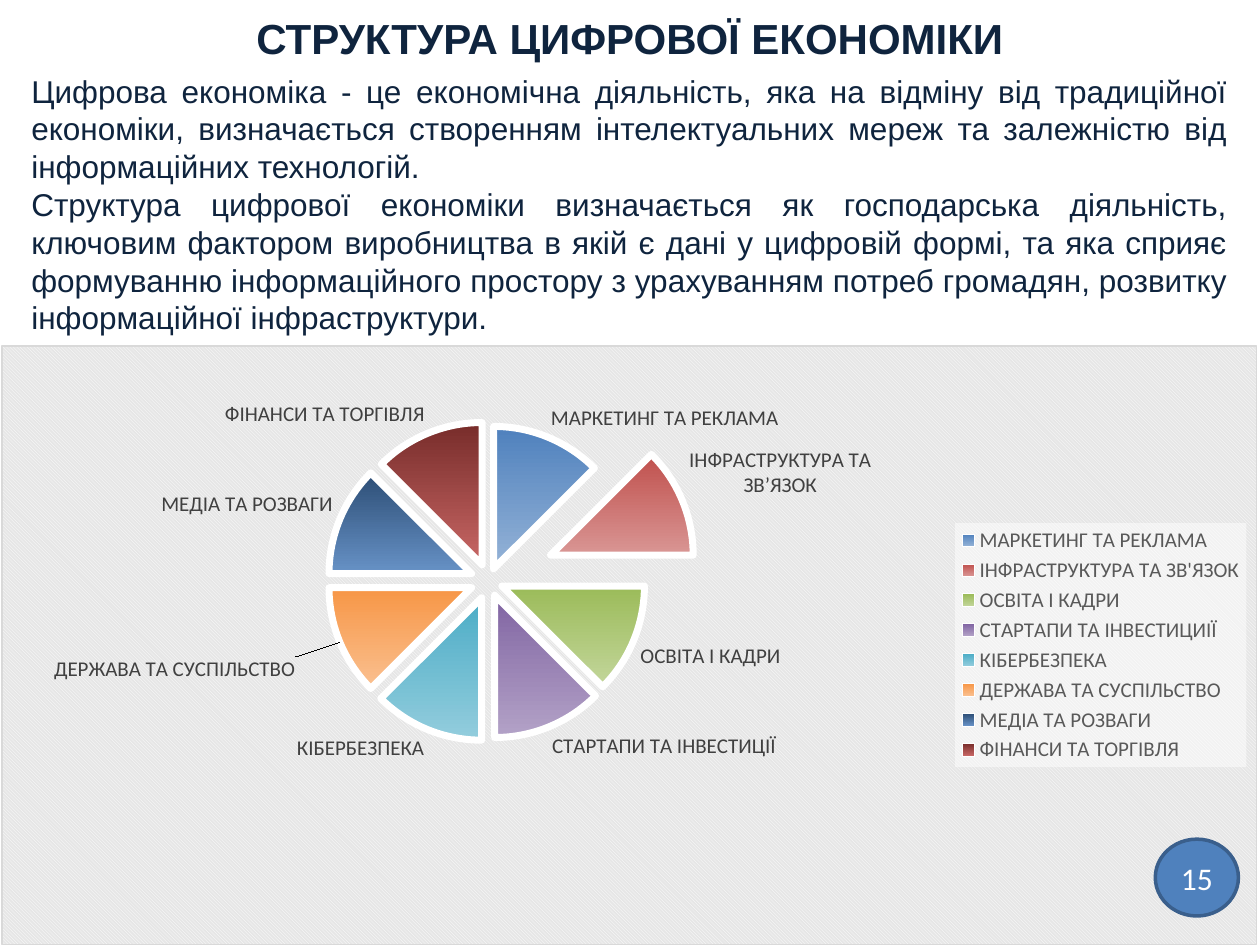
from dataclasses import dataclass

from lxml.etree import SubElement
from pptx import Presentation
from pptx.chart.data import CategoryChartData
from pptx.dml.color import RGBColor
from pptx.enum.chart import XL_CHART_TYPE as ChartType
from pptx.enum.chart import XL_LABEL_POSITION as LabelPosition
from pptx.enum.chart import XL_LEGEND_POSITION as LegendPosition
from pptx.enum.shapes import MSO_SHAPE as Shape
from pptx.enum.text import MSO_ANCHOR as Anchor
from pptx.enum.text import PP_ALIGN as Align
from pptx.oxml import parse_xml
from pptx.oxml.ns import nsdecls, qn
from pptx.util import Pt


@dataclass(frozen=True)
class Theme:
    heading_font: str = "Arial"
    chart_font: str = "Calibri"
    title_size: int = 24
    body_size: int = 18
    label_size: int = 12
    ink: str = "0F243E"
    label: str = "404040"
    legend: str = "595959"
    white: str = "FFFFFF"
    hatch: str = "E6E6E6"
    frame: str = "D9D9D9"
    badge: str = "4F81BD"
    badge_line: str = "3A5F8C"


THEME = Theme()

TITLE = "СТРУКТУРА ЦИФРОВОЇ ЕКОНОМІКИ"
BODY = [
    "Цифрова економіка - це економічна діяльність, яка на відміну від традиційної "
    "економіки, визначається створенням інтелектуальних мереж та залежністю від "
    "інформаційних технологій.",
    "Структура цифрової економіки визначається як господарська діяльність, ключовим "
    "фактором виробництва в якій є дані у цифровій формі, та яка сприяє формуванню "
    "інформаційного простору з урахуванням потреб громадян, розвитку інформаційної "
    "інфраструктури.",
]

# Category, gradient start, gradient end, explosion in percent
SECTORS = [
    ("МАРКЕТИНГ ТА РЕКЛАМА", "4F81BD", "95B3D7", 9),
    ("ІНФРАСТРУКТУРА ТА ЗВ'ЯЗОК", "C0504D", "D99694", 47),
    ("ОСВІТА І КАДРИ", "9BBB59", "C3D69B", 10),
    ("СТАРТАПИ ТА ІНВЕСТИЦИІЇ", "8064A2", "B3A2C7", 11),
    ("КІБЕРБЕЗПЕКА", "4BACC6", "93CDDD", 13),
    ("ДЕРЖАВА ТА СУСПІЛЬСТВО", "F79646", "FAC090", 13),
    ("МЕДІА ТА РОЗВАГИ", "2C4D75", "6792C6", 13),
    ("ФІНАНСИ ТА ТОРГІВЛЯ", "772C2A", "C86765", 12),
]
# Labels whose wording differs from the legend
LABEL_TEXT = {1: "ІНФРАСТРУКТУРА ТА ЗВ’ЯЗОК", 3: "СТАРТАПИ ТА ІНВЕСТИЦІЇ"}
LABEL_SHIFT = {5: (-0.03, 0.02)}
SECTOR_VALUE = 12
SERIES_EXPLOSION = 25


def rgb(color):
    return RGBColor.from_string(color)


def set_font(font, name, size, color, bold=False):
    font.name, font.size, font.bold = name, Pt(size), bold
    font.color.rgb = rgb(color)


def add_text(page, bounds, paragraphs, size, align, bold=False):
    box = page.shapes.add_textbox(*map(Pt, bounds))
    frame = box.text_frame
    frame.word_wrap = True
    frame.text = "\n".join(paragraphs)
    for para in frame.paragraphs:
        para.alignment = align
        set_font(para.font, THEME.heading_font, size, THEME.ink, bold)


def add_badge(page, bounds, text):
    badge = page.shapes.add_shape(Shape.OVAL, *map(Pt, bounds))
    badge.shadow.inherit = False
    badge.fill.solid()
    badge.fill.fore_color.rgb = rgb(THEME.badge)
    badge.line.color.rgb = rgb(THEME.badge_line)
    badge.line.width = Pt(2)
    frame = badge.text_frame
    frame.margin_left = frame.margin_right = 0
    frame.vertical_anchor = Anchor.MIDDLE
    frame.text = text
    para = frame.paragraphs[0]
    para.alignment = Align.CENTER
    set_font(para.font, THEME.chart_font, THEME.body_size, THEME.white)


def manual_layout(**settings):
    layout = parse_xml(f"<c:layout {nsdecls('c')}/>")
    manual = SubElement(layout, qn("c:manualLayout"))
    for name, value in settings.items():
        SubElement(manual, qn(f"c:{name}")).set("val", str(value))
    return layout


def explosion(percent):
    return parse_xml(f'<c:explosion {nsdecls("c")} val="{percent}"/>')


def style_sector(series, index):
    name, start, end, percent = SECTORS[index]
    point = series.points[index]
    # Slice
    fill = point.format.fill
    fill.gradient()
    fill.gradient_angle = 270
    for stop, color in zip(fill.gradient_stops, (start, end)):
        stop.color.rgb = rgb(color)
    point.format.line.color.rgb = rgb(THEME.white)
    point.format.line.width = Pt(4)
    properties = series._element.findall(qn("c:dPt"))[index].find(qn("c:spPr"))
    properties.addprevious(explosion(percent))
    # Label
    label = point.data_label
    label.text_frame.text = LABEL_TEXT.get(index, name)
    span = label.text_frame.paragraphs[0].runs[0]
    set_font(span.font, THEME.chart_font, THEME.label_size, THEME.label)
    label.position = LabelPosition.OUTSIDE_END
    if index in LABEL_SHIFT:
        x, y = LABEL_SHIFT[index]
        series._element.find(qn("c:dLbls")).findall(qn("c:dLbl"))[index].insert(
            1, manual_layout(x=x, y=y))


def style_chart_area(chart):
    space = chart._chartSpace
    space.find(qn("c:txPr")).addprevious(parse_xml(
        f'<c:spPr {nsdecls("c", "a")}><a:pattFill prst="dkDnDiag">'
        f'<a:fgClr><a:srgbClr val="{THEME.white}"/></a:fgClr>'
        f'<a:bgClr><a:srgbClr val="{THEME.hatch}"/></a:bgClr></a:pattFill>'
        f'<a:ln w="{Pt(0.75)}"><a:solidFill><a:srgbClr val="{THEME.frame}"/>'
        '</a:solidFill></a:ln></c:spPr>'))
    plot_area = space.find(f".//{qn('c:plotArea')}")
    for layout in plot_area.findall(qn("c:layout")):
        plot_area.remove(layout)
    plot_area.insert(0, manual_layout(
        layoutTarget="inner", xMode="edge", yMode="edge",
        x=0.086, y=0.095, w=0.604, h=0.595))


def style_legend(chart):
    chart.has_legend = True
    legend = chart.legend
    legend.position = LegendPosition.RIGHT
    legend.include_in_layout = False
    set_font(legend.font, THEME.chart_font, THEME.label_size, THEME.legend)
    legend._element.find(qn("c:txPr")).addprevious(parse_xml(
        f'<c:spPr {nsdecls("c", "a")}><a:solidFill><a:srgbClr val="{THEME.white}">'
        '<a:alpha val="50000"/></a:srgbClr></a:solidFill></c:spPr>'))


def add_sector_pie(page, bounds):
    data = CategoryChartData()
    data.categories = [sector[0] for sector in SECTORS]
    data.add_series("Series 1", [SECTOR_VALUE] * len(SECTORS))
    chart = page.shapes.add_chart(ChartType.PIE, *map(Pt, bounds), data).chart
    chart.has_title = False
    set_font(chart.font, THEME.chart_font, 10, "000000")
    style_chart_area(chart)
    style_legend(chart)

    chart.plots[0].vary_by_categories = True
    series = chart.plots[0].series[0]
    labels = series.data_labels
    labels.show_value, labels.show_category_name = False, True
    labels.position = LabelPosition.OUTSIDE_END
    set_font(labels.font, THEME.chart_font, THEME.label_size, THEME.label)
    for index in range(len(SECTORS)):
        style_sector(series, index)
    series._element.find(qn("c:dPt")).addprevious(explosion(SERIES_EXPLOSION))


def main():
    deck = Presentation()
    deck.slide_width, deck.slide_height = Pt(720), Pt(540)
    page = deck.slides.add_slide(deck.slide_layouts[6])

    add_sector_pie(page, (0.7, 197.3, 717.8, 342.7))
    add_text(page, (0, 3.6, 720, 36), [TITLE], THEME.title_size, Align.CENTER, bold=True)
    add_text(page, (10.8, 37.4, 697.7, 159.8), BODY, THEME.body_size, Align.JUSTIFY)
    add_badge(page, (660.2, 479.5, 47.5, 43.9), "15")

    deck.save("out.pptx")


if __name__ == "__main__":
    main()
